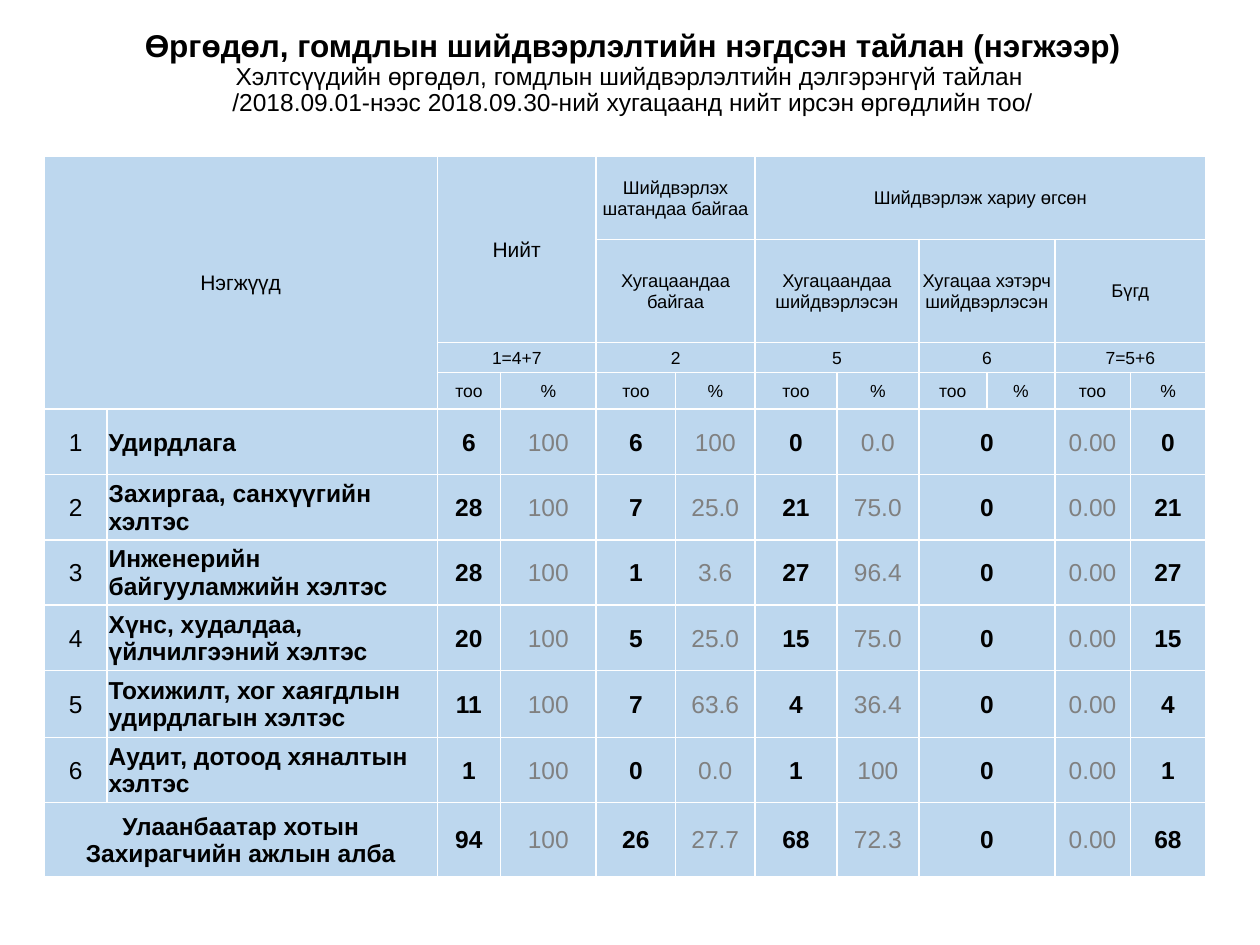
import lxml.etree
import pptx
import pptx.dml.color
import pptx.enum.text
import pptx.oxml.ns
import pptx.util

Cm = pptx.util.Cm
Pt = pptx.util.Pt
RGBColor = pptx.dml.color.RGBColor
ALIGN = pptx.enum.text.PP_ALIGN
MIDDLE = pptx.enum.text.MSO_ANCHOR.MIDDLE

BLACK = RGBColor(0x00, 0x00, 0x00)
GRAY = RGBColor(0x80, 0x80, 0x80)
WHITE = RGBColor(0xFF, 0xFF, 0xFF)
PALE_BLUE = RGBColor(0xBD, 0xD7, 0xEE)

TITLE_LINES = [
    ("Өргөдөл, гомдлын шийдвэрлэлтийн нэгдсэн тайлан (нэгжээр)", 18, True),
    ("Хэлтсүүдийн өргөдөл, гомдлын шийдвэрлэлтийн дэлгэрэнгүй тайлан ", 14, False),
    ("/2018.09.01-нээс 2018.09.30-ний хугацаанд нийт ирсэн өргөдлийн тоо/", 14, False),
]

COLUMN_WEIGHTS = [1.27, 6.65, 1.27, 1.93, 1.6, 1.6, 1.65, 1.65, 1.37, 1.37, 1.52, 1.52]
ROW_WEIGHTS = [1.68, 2.08, 0.61, 0.74, 1.32, 1.32, 1.32, 1.32, 1.35, 1.32, 1.5]

HEADERS = [
    (0, 0, 4, 2, "Нэгжүүд", 12),
    (0, 2, 2, 2, "Нийт", 12),
    (0, 4, 1, 2, "Шийдвэрлэх шатандаа байгаа", 10.5),
    (0, 6, 1, 6, "Шийдвэрлэж хариу өгсөн", 10.5),
    (1, 4, 1, 2, "Хугацаандаа байгаа", 10.5),
    (1, 6, 1, 2, "Хугацаандаа шийдвэрлэсэн", 10.5),
    (1, 8, 1, 2, "Хугацаа хэтэрч шийдвэрлэсэн", 10.5),
    (1, 10, 1, 2, "Бүгд", 10.5),
]
FORMULAS = ["1=4+7", "2", "5", "6", "7=5+6"]

UNITS = [
    ("Удирдлага", ["6", "100", "6", "100", "0", "0.0", "0", "0.00", "0"]),
    ("Захиргаа, санхүүгийн хэлтэс",
     ["28", "100", "7", "25.0", "21", "75.0", "0", "0.00", "21"]),
    ("Инженерийн байгууламжийн хэлтэс",
     ["28", "100", "1", "3.6", "27", "96.4", "0", "0.00", "27"]),
    ("Хүнс, худалдаа, үйлчилгээний хэлтэс",
     ["20", "100", "5", "25.0", "15", "75.0", "0", "0.00", "15"]),
    ("Тохижилт, хог хаягдлын удирдлагын хэлтэс",
     ["11", "100", "7", "63.6", "4", "36.4", "0", "0.00", "4"]),
    ("Аудит, дотоод хяналтын хэлтэс",
     ["1", "100", "0", "0.0", "1", "100", "0", "0.00", "1"]),
    ("Улаанбаатар хотын Захирагчийн ажлын алба",
     ["94", "100", "26", "27.7", "68", "72.3", "0", "0.00", "68"]),
]
VALUE_COLUMNS = [2, 3, 4, 5, 6, 7, 8, 10, 11]
FIRST_UNIT_ROW = 4


def apply_format(target, values):
    for name, value in values.items():
        setattr(target, name, value)


def add_run(paragraph, text, size, bold=False, color=BLACK):
    run = paragraph.add_run()
    run.text = text
    apply_format(run.font, {"name": "Arial", "size": Pt(size), "bold": bold})
    run.font.color.rgb = color


def add_title(slide, left, top, width, height):
    frame = slide.shapes.add_textbox(left, top, width, height).text_frame
    apply_format(frame, {"word_wrap": True, "vertical_anchor": MIDDLE})
    paragraph = frame.paragraphs[0]
    apply_format(paragraph, {"alignment": ALIGN.CENTER, "line_spacing": 0.9})
    for index, (text, size, bold) in enumerate(TITLE_LINES):
        if index:
            paragraph.add_line_break()
        add_run(paragraph, text, size, bold)


def style_cell(cell):
    apply_format(cell, {
        "margin_left": Cm(0.03),
        "margin_right": Cm(0.03),
        "margin_top": Cm(0.03),
        "margin_bottom": 0,
        "vertical_anchor": MIDDLE,
    })
    qn = pptx.oxml.ns.qn
    properties = cell._tc.get_or_add_tcPr()
    for side in ("a:lnL", "a:lnR", "a:lnT", "a:lnB"):
        line = lxml.etree.SubElement(properties, qn(side), w=str(Pt(1)))
        fill = lxml.etree.SubElement(line, qn("a:solidFill"))
        lxml.etree.SubElement(fill, qn("a:srgbClr"), val=str(WHITE))
    cell.fill.solid()
    cell.fill.fore_color.rgb = PALE_BLUE


def write_cell(table, row, column, text, size, bold=False, color=BLACK,
               rows=1, columns=1, alignment=ALIGN.CENTER):
    cell = table.cell(row, column)
    if rows * columns > 1:
        cell.merge(table.cell(row + rows - 1, column + columns - 1))
    paragraph = cell.text_frame.paragraphs[0]
    paragraph.alignment = alignment
    add_run(paragraph, text, size, bold, color)


def write_headers(table):
    for row, column, rows, columns, text, size in HEADERS:
        write_cell(table, row, column, text, size, rows=rows, columns=columns)
    for index, formula in enumerate(FORMULAS):
        column = 2 + 2 * index
        write_cell(table, 2, column, formula, 10, columns=2)
        write_cell(table, 3, column, "тоо", 10)
        write_cell(table, 3, column + 1, "%", 10)


def write_units(table):
    for index, (name, values) in enumerate(UNITS):
        row = FIRST_UNIT_ROW + index
        if index == len(UNITS) - 1:
            write_cell(table, row, 0, name, 14, True, columns=2)
        else:
            write_cell(table, row, 0, str(index + 1), 14)
            write_cell(table, row, 1, name, 14, True, alignment=ALIGN.LEFT)
        for position, (column, value) in enumerate(zip(VALUE_COLUMNS, values)):
            is_count = position % 2 == 0
            write_cell(table, row, column, value, 14, is_count,
                       BLACK if is_count else GRAY,
                       columns=2 if column == 8 else 1)


def add_report_table(slide, left, top, width, height):
    table = slide.shapes.add_table(len(ROW_WEIGHTS), len(COLUMN_WEIGHTS),
                                   left, top, width, height).table
    apply_format(table, {"first_row": False, "horz_banding": False})
    for column, weight in zip(table.columns, COLUMN_WEIGHTS):
        column.width = round(width * weight / sum(COLUMN_WEIGHTS))
    for row, weight in zip(table.rows, ROW_WEIGHTS):
        row.height = round(height * weight / sum(ROW_WEIGHTS))
    for cell in table.iter_cells():
        style_cell(cell)
    write_headers(table)
    write_units(table)


def main():
    presentation = pptx.Presentation()
    apply_format(presentation, {"slide_width": Cm(25.4), "slide_height": Cm(19.05)})
    slide = presentation.slides.add_slide(presentation.slide_layouts[6])
    add_title(slide, Cm(2.08), Cm(0.3), Cm(21.36), Cm(2.36))
    add_report_table(slide, Cm(0.89), Cm(3.15), Cm(23.42), Cm(14.53))
    presentation.save("out.pptx")


if __name__ == "__main__":
    main()
